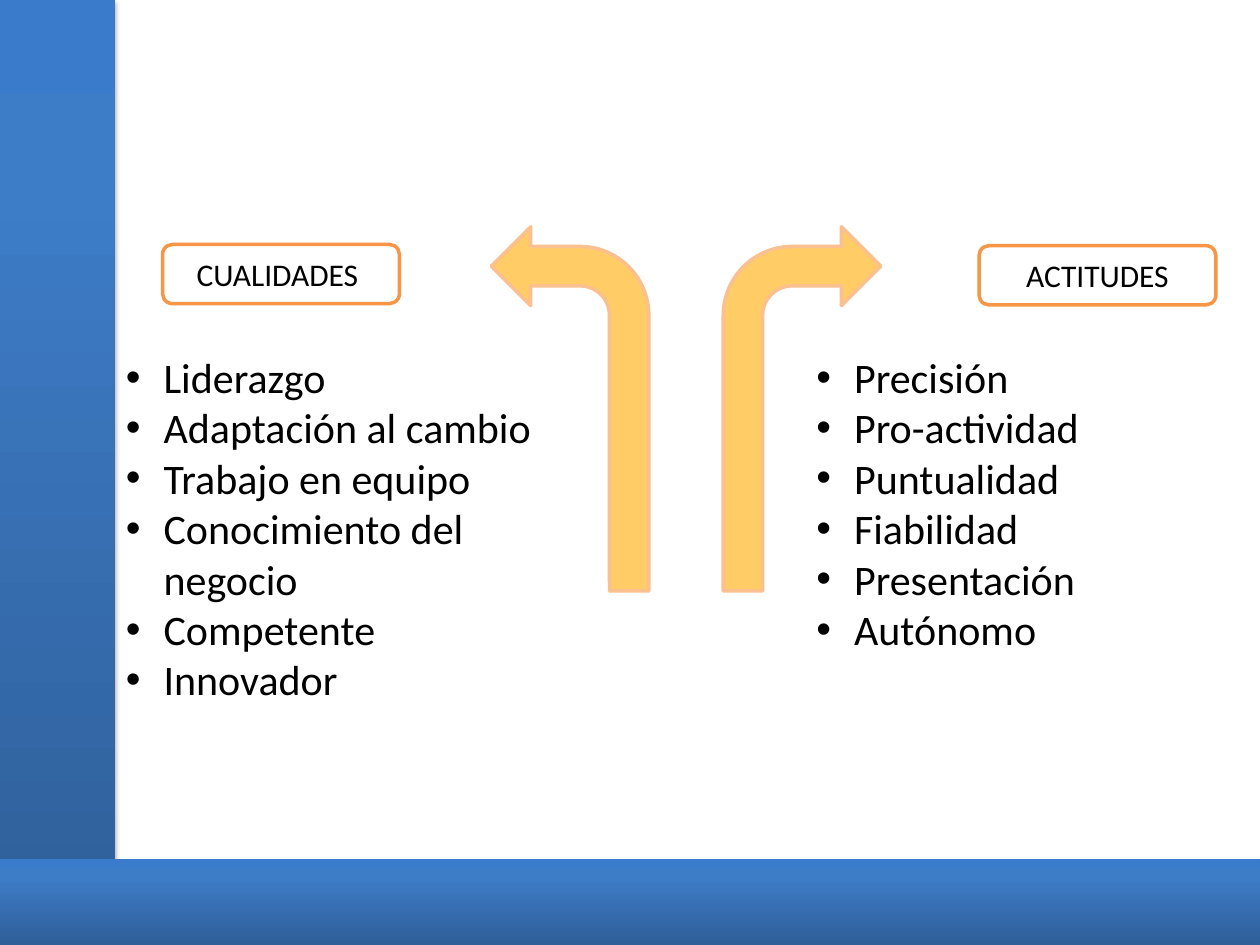
from copy import deepcopy

from pptx import Presentation
from pptx.dml.color import RGBColor
from pptx.enum.shapes import MSO_SHAPE
from pptx.enum.text import MSO_ANCHOR, MSO_AUTO_SIZE, PP_ALIGN
from pptx.oxml import parse_xml
from pptx.oxml.ns import nsdecls, qn
from pptx.util import Inches, Pt

RECTANGLE = MSO_SHAPE.RECTANGLE
ROUNDED = MSO_SHAPE.ROUNDED_RECTANGLE
BENT_ARROW = MSO_SHAPE.BENT_ARROW
MIDDLE = MSO_ANCHOR.MIDDLE
CENTER = PP_ALIGN.CENTER
GROW = MSO_AUTO_SIZE.SHAPE_TO_FIT_TEXT

# Content
COLUMNS = [
    {"title": "CUALIDADES ", "title_at": (1.29, 1.94), "arrow_left": 3.9, "flip": True,
     "list_left": 0.9, "list_height": 2.93,
     "items": ["Liderazgo", "Adaptación al cambio", "Trabajo en equipo",
               "Conocimiento del negocio", "Competente", "Innovador"]},
    {"title": "ACTITUDES", "title_at": (7.77, 1.95), "arrow_left": 5.74, "flip": False,
     "list_left": 6.38, "list_height": 2.52,
     "items": ["Precisión", "Pro-actividad", "Puntualidad",
               "Fiabilidad", "Presentación", "Autónomo"]},
]
BARS = [(0, 0, 0.91, 7.5), (0, 6.82, 10, 0.68)]
COLORS = {"text": "000000", "box": "FFFFFF", "box_line": "F79646",
          "arrow": "FFCC66", "arrow_line": "FAC090"}
BAR_STOPS = [(0, "2F5F99"), (0.8, "3D7CC7"), (1, "3A7CCB")]
FONT = "Calibri"
INDENT = Inches(0.3)


def rgb(name):
    return RGBColor.from_string(COLORS[name])


def add_shape(shapes, kind, box, fill=None, line=None):
    shape = shapes.add_shape(kind, *map(Inches, box))
    shape.shadow.inherit = False
    if fill:
        shape.fill.solid()
        shape.fill.fore_color.rgb = rgb(fill)
    if line:
        shape.line.color.rgb = rgb(line)
        shape.line.width = Pt(2)
    else:
        shape.line.fill.background()
    return shape


def add_bar(shapes, box):
    bar = add_shape(shapes, RECTANGLE, box)
    bar.fill.gradient()
    bar.fill.gradient_angle = 90
    stop_list = bar._element.spPr.find(qn("a:gradFill")).find(qn("a:gsLst"))
    stop_list.append(deepcopy(stop_list[-1]))
    for stop, (position, color) in zip(bar.fill.gradient_stops, BAR_STOPS):
        stop.position = position
        stop.color.rgb = RGBColor.from_string(color)
    bar._element.spPr.find(qn("a:effectLst")).append(parse_xml(
        f'<a:outerShdw {nsdecls("a")} blurRad="{Pt(3.1)}" dist="{Pt(1.8)}" '
        'dir="5400000" rotWithShape="0"><a:srgbClr val="000000">'
        '<a:alpha val="35000"/></a:srgbClr></a:outerShdw>'))


def add_run(paragraph, text, size):
    run = paragraph.add_run()
    run.text = text
    run.font.name = FONT
    run.font.size = Pt(size)
    run.font.color.rgb = rgb("text")


def add_bullet(paragraph):
    properties = paragraph._p.get_or_add_pPr()
    properties.set("marL", str(INDENT))
    properties.set("indent", str(-INDENT))
    properties.append(parse_xml(f'<a:buFont {nsdecls("a")} typeface="Arial"/>'))
    properties.append(parse_xml(f'<a:buChar {nsdecls("a")} char="•"/>'))


def add_heading(slide, column):
    group = slide.shapes.add_group_shape().shapes
    arrow = add_shape(group, BENT_ARROW, (column["arrow_left"], 1.8, 1.25, 2.89),
                      "arrow", "arrow_line")
    if column["flip"]:
        arrow._element.spPr.xfrm.set("flipH", "1")
    title = add_shape(group, ROUNDED, (*column["title_at"], 1.88, 0.47), "box", "box_line")
    title.text_frame.vertical_anchor = MIDDLE
    paragraph = title.text_frame.paragraphs[0]
    paragraph.alignment = CENTER
    add_run(paragraph, column["title"], 18)


def add_list(slide, column):
    box = (column["list_left"], 2.74, 3.58, column["list_height"])
    frame = slide.shapes.add_textbox(*map(Inches, box)).text_frame
    frame.word_wrap = True
    frame.auto_size = GROW
    for index, item in enumerate(column["items"]):
        paragraph = frame.add_paragraph() if index else frame.paragraphs[0]
        add_bullet(paragraph)
        add_run(paragraph, item, 24)


def main():
    presentation = Presentation()
    presentation.slide_width = Inches(10)
    presentation.slide_height = Inches(7.5)
    slide = presentation.slides.add_slide(presentation.slide_layouts[6])

    # Blue frame on the left and bottom
    for box in BARS:
        add_bar(slide.shapes, box)

    # Arrows with titles, then the lists
    for column in COLUMNS:
        add_heading(slide, column)
    for column in COLUMNS:
        add_list(slide, column)

    presentation.save("out.pptx")


if __name__ == "__main__":
    main()
